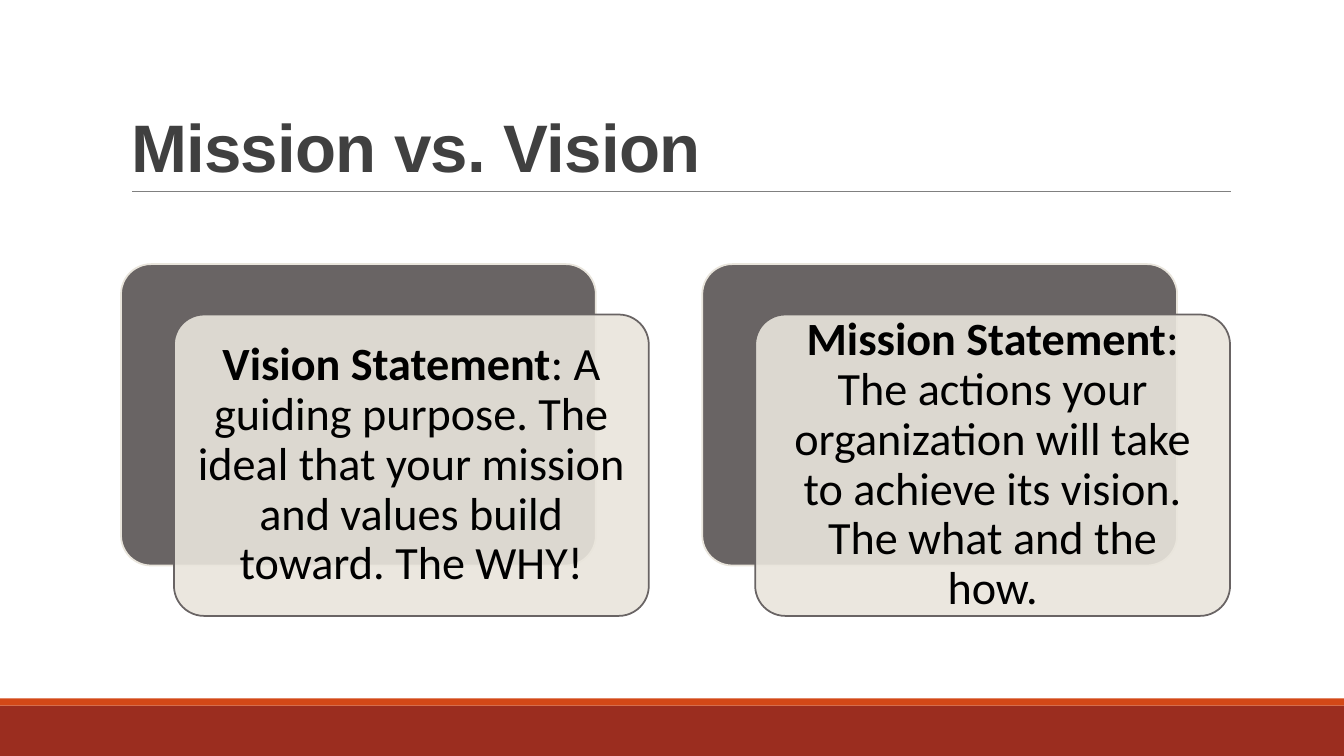
from lxml.etree import SubElement
from pptx import Presentation
from pptx.dml.color import RGBColor
from pptx.enum.shapes import MSO_CONNECTOR, MSO_SHAPE
from pptx.enum.text import MSO_ANCHOR, MSO_AUTO_SIZE, PP_ALIGN
from pptx.oxml.ns import qn
from pptx.util import Inches, Pt

# Content
TITLE = "Mission vs. Vision"
STATEMENTS = [
    ("Vision Statement", ": A guiding purpose. The ideal that your mission "
                         "and values build toward. The WHY!"),
    ("Mission Statement", ": The actions your organization will take to "
                          "achieve its vision. The what and the how."),
]

# Look
COLORS = {"band": "9B2D1F", "stripe": "D34817", "rule": "808080",
          "title": "404040", "dark": "696464", "light": "E9E5DC",
          "text": "000000"}
TITLE_FONT = {"name": "Arial", "size": Pt(48), "bold": True}
CARD_FONT = {"name": "Calibri", "size": Pt(33)}
CARD_FRAME = {"word_wrap": True, "vertical_anchor": MSO_ANCHOR.MIDDLE,
              **{f"margin_{side}": Inches(0.14)
                 for side in ("left", "top", "right", "bottom")}}
TITLE_FRAME = {"word_wrap": True, "vertical_anchor": MSO_ANCHOR.BOTTOM,
               "auto_size": MSO_AUTO_SIZE.NONE}

# Grid, in inches
WIDTH, HEIGHT = 13.33, 7.5
BAND_H, STRIPE_H = 0.5, 0.07
LEFT, CONTENT_W = 1.2, 11
TITLE_TOP, RULE_Y = 0.31, 1.9
CARD_TOP, CARD_W, CARD_H = 2.62, 4.71, 2.99
SHIFT_X, SHIFT_Y = 0.525, 0.5
COLUMN_STEP = CONTENT_W - CARD_W - SHIFT_X


def color(name):
    return RGBColor.from_string(COLORS[name])


def set_all(obj, values):
    for name, value in values.items():
        setattr(obj, name, value)


def add_box(kind, x, y, w, h, fill, line=None):
    sp = s.shapes.add_shape(kind, *map(Inches, (x, y, w, h)))
    sp.shadow.inherit = False
    sp.fill.solid()
    sp.fill.fore_color.rgb = color(fill)
    if line:
        sp.line.color.rgb = color(line)
        sp.line.width = Pt(1.25)
    else:
        sp.line.fill.background()
    return sp


def add_run(p, text, values, fill):
    r = p.add_run()
    r.text = text
    set_all(r.font, values)
    r.font.color.rgb = color(fill)
    return r


prs = Presentation()
prs.slide_width, prs.slide_height = Inches(WIDTH), Inches(HEIGHT)
s = prs.slides.add_slide(prs.slide_layouts[5])

# Footer band and stripe
band_top = HEIGHT - BAND_H
add_box(MSO_SHAPE.RECTANGLE, 0, band_top, WIDTH, BAND_H, "band")
add_box(MSO_SHAPE.RECTANGLE, 0, band_top - STRIPE_H, WIDTH, STRIPE_H, "stripe")

# Title with the rule below it
title = s.shapes.title
set_all(title, {"left": Inches(LEFT), "top": Inches(TITLE_TOP),
                "width": Inches(CONTENT_W),
                "height": Inches(RULE_Y - TITLE_TOP)})
set_all(title.text_frame, TITLE_FRAME)
p = title.text_frame.paragraphs[0]
set_all(p, {"alignment": PP_ALIGN.LEFT, "line_spacing": 0.85})
r = add_run(p, TITLE, TITLE_FONT, "title")
r.font._element.set("spc", "-50")

rule = s.shapes.add_connector(MSO_CONNECTOR.STRAIGHT, Inches(LEFT + 0.11),
                              Inches(RULE_Y), Inches(LEFT + CONTENT_W + 0.01),
                              Inches(RULE_Y))
rule.line.color.rgb = color("rule")
rule.line.width = Pt(0.5)
SubElement(rule._element.spPr, qn("a:effectLst"))

# Statement cards: a dark back and a translucent front with the text
for i, (term, meaning) in enumerate(STATEMENTS):
    x = LEFT + i * COLUMN_STEP
    back = add_box(MSO_SHAPE.ROUNDED_RECTANGLE, x, CARD_TOP, CARD_W, CARD_H,
                   "dark", "light")
    front = add_box(MSO_SHAPE.ROUNDED_RECTANGLE, x + SHIFT_X,
                    CARD_TOP + SHIFT_Y, CARD_W, CARD_H, "light", "dark")
    for sp in (back, front):
        sp.adjustments[0] = 0.1
    rgb = front._element.spPr.find(qn("a:solidFill")).find(qn("a:srgbClr"))
    SubElement(rgb, qn("a:alpha")).set("val", "90000")

    tf = front.text_frame
    set_all(tf, CARD_FRAME)
    p = tf.paragraphs[0]
    set_all(p, {"alignment": PP_ALIGN.CENTER, "line_spacing": 0.9})
    for text, bold in ((term, True), (meaning, False)):
        add_run(p, text, {**CARD_FONT, "bold": bold}, "text")

prs.save("out.pptx")
